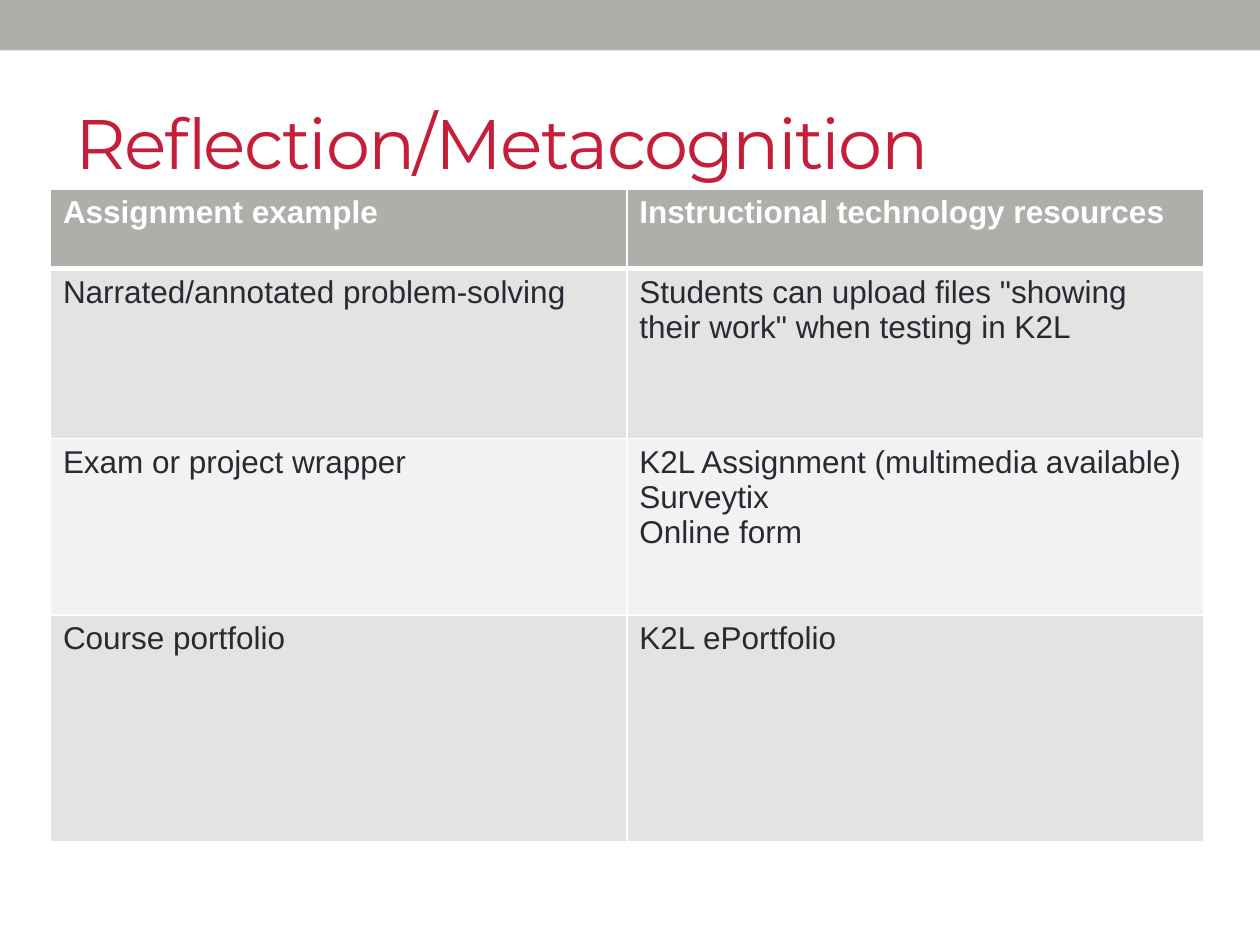
from dataclasses import dataclass

from lxml.etree import SubElement
from pptx import Presentation
from pptx.dml.color import RGBColor
from pptx.enum.shapes import MSO_SHAPE
from pptx.enum.text import MSO_ANCHOR
from pptx.oxml.ns import qn
from pptx.slide import Slide
from pptx.table import _Cell
from pptx.util import Inches, Pt

COLORS = {
    "gray": "ADAFAA",
    "red": "C41E3A",
    "white": "FFFFFF",
    "ink": "292934",
    "band_dark": "E3E3E2",
    "band_light": "F1F2F1",
}


@dataclass
class TableRow:
    """One row of the assignment table."""

    height: float
    assignment: str
    resources: str
    fill: str
    is_header: bool = False


ROWS = [
    TableRow(0.63, "Assignment example", "Instructional technology resources", "gray", True),
    TableRow(1.35, "Narrated/annotated problem-solving",
             'Students can upload files "showing their work" when testing in K2L', "band_dark"),
    TableRow(1.4, "Exam or project wrapper",
             "K2L Assignment (multimedia available)\nSurveytix\nOnline form", "band_light"),
    TableRow(1.8, "Course portfolio", "K2L ePortfolio", "band_dark"),
]


def color(name: str) -> RGBColor:
    """Return a named palette colour."""
    return RGBColor.from_string(COLORS[name])


def add_border(cell: _Cell, side: str, points: float) -> None:
    """Draw a white line on one side of a cell."""
    properties = cell._tc.get_or_add_tcPr()
    line = SubElement(properties, qn(f"a:ln{side}"), w=str(Pt(points)))
    fill = SubElement(line, qn("a:solidFill"))
    SubElement(fill, qn("a:srgbClr"), val=COLORS["white"])


def add_banner(slide: Slide) -> None:
    """Add the gray band across the top."""
    banner = slide.shapes.add_shape(MSO_SHAPE.RECTANGLE, 0, 0, Inches(10), Inches(0.4))
    banner.shadow.inherit = False
    banner.fill.solid()
    banner.fill.fore_color.rgb = color("gray")
    banner.line.fill.background()


def add_title(slide: Slide, text: str) -> None:
    """Add the slide title."""
    title = slide.shapes.add_textbox(Inches(0.5), Inches(0.58), Inches(9), Inches(1.08))
    text_frame = title.text_frame
    text_frame.word_wrap = True
    text_frame.vertical_anchor = MSO_ANCHOR.MIDDLE
    text_frame.text = text
    font = text_frame.paragraphs[0].runs[0].font
    font.name, font.size = "Montserrat", Pt(40)
    font.color.rgb = color("red")
    font._element.set("spc", "-100")


def fill_cell(cell: _Cell, text: str, row: TableRow, top: float) -> None:
    """Write and format one table cell."""
    bottom = 3 if row.is_header else 1
    for side, points in (("L", 1), ("R", 1), ("T", top), ("B", bottom)):
        add_border(cell, side, points)
    cell.fill.solid()
    cell.fill.fore_color.rgb = color(row.fill)
    cell.text_frame.text = text
    for paragraph in cell.text_frame.paragraphs:
        font = paragraph.runs[0].font
        font.name, font.size, font.bold = "Arial", Pt(18), row.is_header
        font.color.rgb = color("white" if row.is_header else "ink")


def add_assignment_table(slide: Slide, rows: list[TableRow]) -> None:
    """Add the table of assignments and resources."""
    height = sum(row.height for row in rows)
    table = slide.shapes.add_table(
        len(rows), 2, Inches(0.4), Inches(1.5), Inches(9.15), Inches(height)
    ).table
    for index, row in enumerate(rows):
        table.rows[index].height = Inches(row.height)
        top = 3 if index == 1 else 1
        for column, text in enumerate((row.assignment, row.resources)):
            fill_cell(table.cell(index, column), text, row, top)


def main() -> None:
    """Build and save the slide."""
    presentation = Presentation()
    presentation.slide_width, presentation.slide_height = Inches(10), Inches(7.5)
    slide = presentation.slides.add_slide(presentation.slide_layouts[6])
    add_banner(slide)
    add_title(slide, "Reflection/Metacognition")
    add_assignment_table(slide, ROWS)
    presentation.save("out.pptx")


if __name__ == "__main__":
    main()
